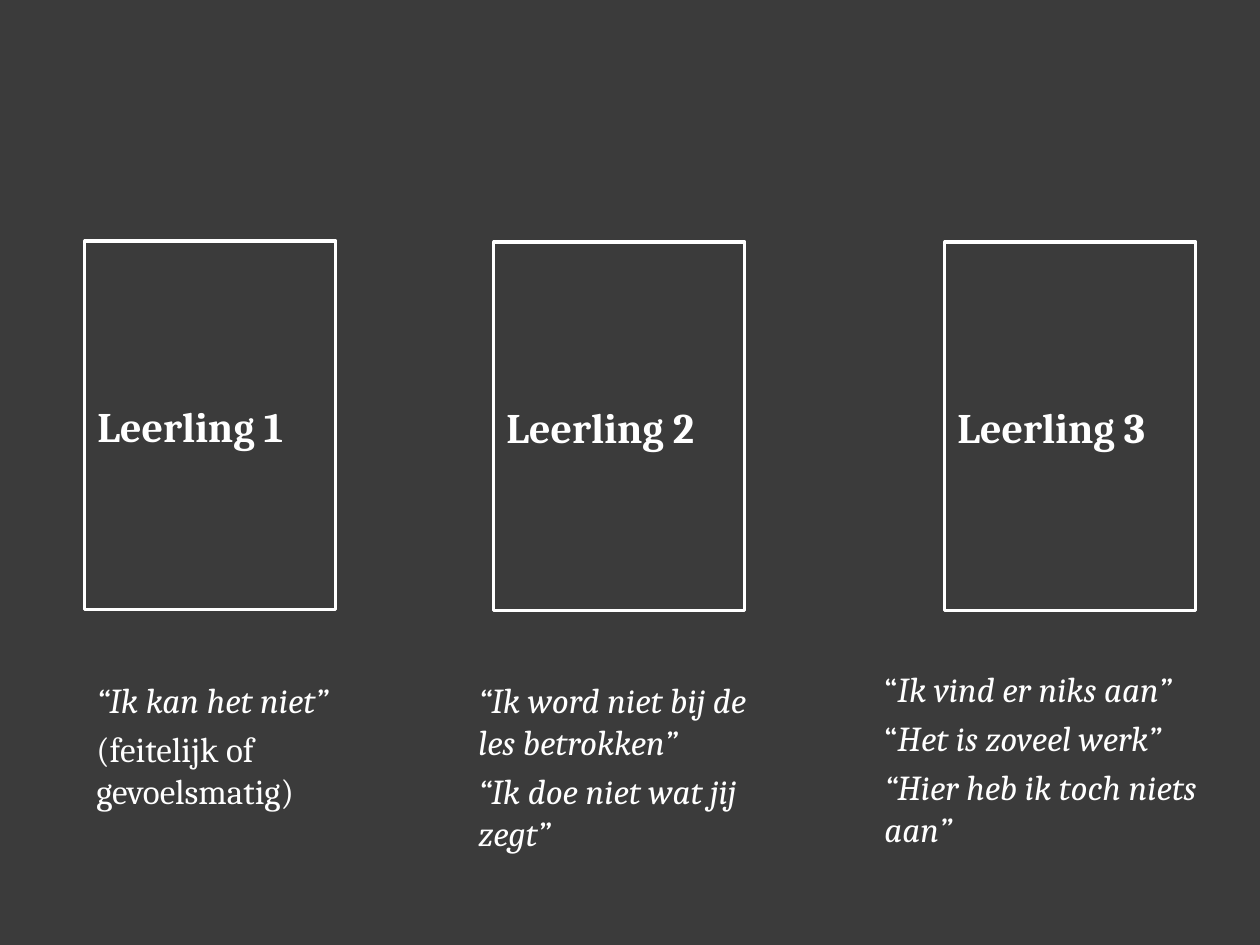
from dataclasses import dataclass

from pptx import Presentation
from pptx.dml.color import RGBColor
from pptx.enum.shapes import MSO_SHAPE
from pptx.enum.text import MSO_ANCHOR, PP_ALIGN
from pptx.util import Emu, Pt

EMU_PER_PX = 914400 / 126


def px(n):
    return Emu(round(n * EMU_PER_PX))


@dataclass(frozen=True)
class Theme:
    background: RGBColor = RGBColor(0x3B, 0x3B, 0x3B)
    ink: RGBColor = RGBColor(0xFF, 0xFF, 0xFF)
    font: str = "Cambria"
    label_size: Pt = Pt(24)
    quote_size: Pt = Pt(20)
    quote_gap: Pt = Pt(4)
    outline: Pt = Pt(1.75)


class SlideBuilder:
    def __init__(self, slide, theme):
        self.s = slide
        self.theme = theme
        fill = slide.background.fill
        fill.solid()
        fill.fore_color.rgb = theme.background

    def run(self, p, text, **formats):
        r = p.add_run()
        r.text = text
        for name, value in {"name": self.theme.font, **formats}.items():
            setattr(r.font, name, value)
        r.font.color.rgb = self.theme.ink

    def card(self, label, left, top, width, height):
        sp = self.s.shapes.add_shape(MSO_SHAPE.RECTANGLE, *map(px, (left, top, width, height)))
        sp.shadow.inherit = False
        sp.fill.background()
        sp.line.color.rgb = self.theme.ink
        sp.line.width = self.theme.outline
        tf = sp.text_frame
        tf.word_wrap = True
        tf.vertical_anchor = MSO_ANCHOR.MIDDLE
        p = tf.paragraphs[0]
        p.alignment = PP_ALIGN.LEFT
        self.run(p, label, size=self.theme.label_size, bold=True)

    def quotes(self, paragraphs, left, top, width, height):
        tf = self.s.shapes.add_textbox(*map(px, (left, top, width, height))).text_frame
        tf.word_wrap = True
        for i, runs in enumerate(paragraphs):
            p = tf.add_paragraph() if i else tf.paragraphs[0]
            p.space_before = self.theme.quote_gap
            for text, italic in runs:
                self.run(p, text, size=self.theme.quote_size, italic=italic)


CARD_SIZE = (251, 369)
PUPILS = [
    ((85, 241), (84, 672, 315, 199), [
        [("“Ik kan het niet”", True)],
        [("(feitelijk of gevoelsmatig)", False)],
    ]),
    ((494, 242), (466, 672, 305, 199), [
        [("“Ik word niet bij de les betrokken”", True)],
        [("“Ik doe niet wat jij zegt”", True)],
    ]),
    ((945, 242), (872, 661, 368, 231), [
        [("“", False), ("Ik vind er niks aan”", True)],
        [("“", False), ("Het is zoveel werk”", True)],
        [("“Hier heb ik toch niets aan”", True)],
    ]),
]


def main():
    prs = Presentation()
    prs.slide_width, prs.slide_height = px(1260), px(945)
    builder = SlideBuilder(prs.slides.add_slide(prs.slide_layouts[6]), Theme())
    for number, (corner, quote_box, paragraphs) in enumerate(PUPILS, 1):
        builder.card(f"Leerling {number}", *corner, *CARD_SIZE)
        builder.quotes(paragraphs, *quote_box)
    prs.save("out.pptx")


if __name__ == "__main__":
    main()
